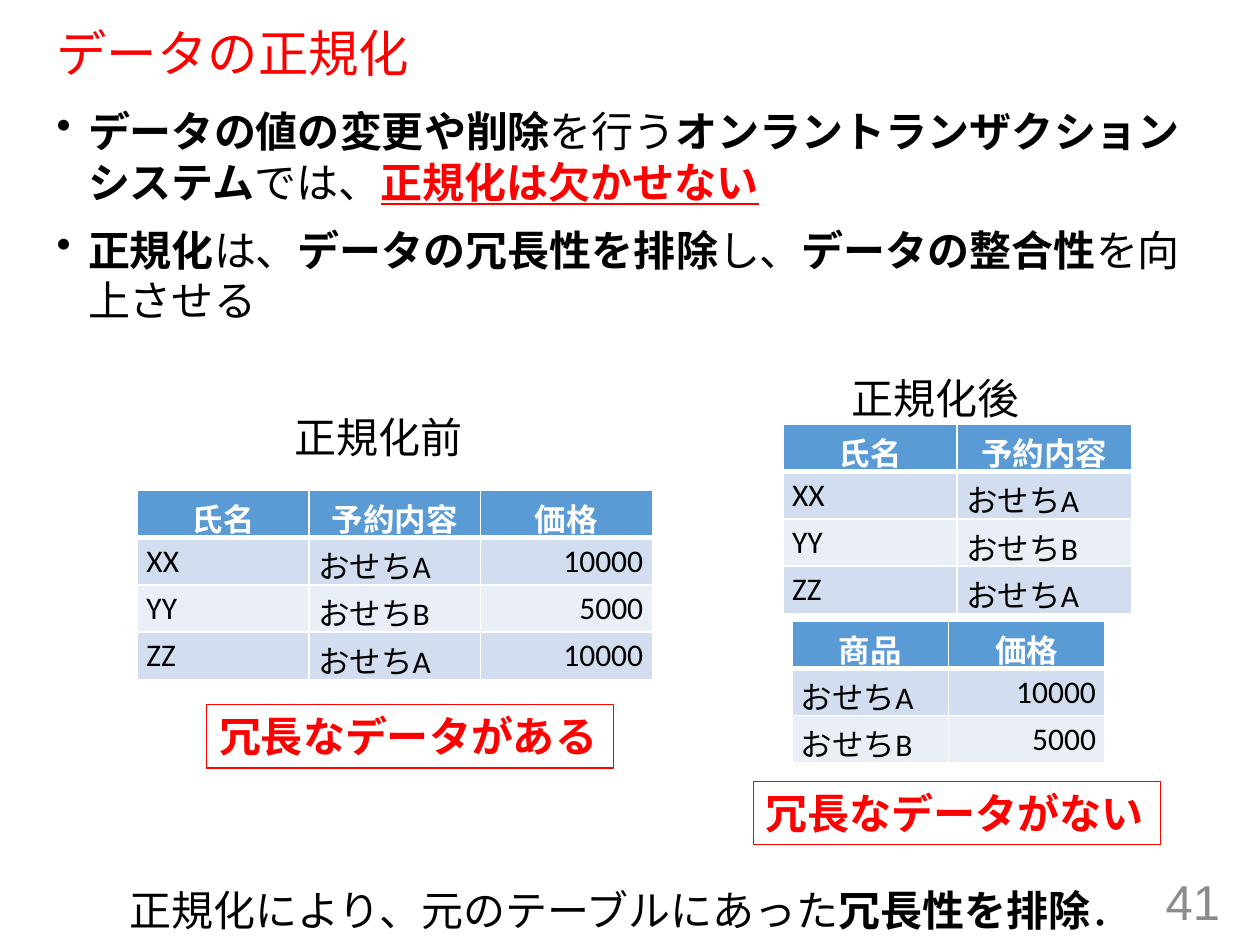
import pptx
import pptx.dml.color
import pptx.enum.text
import pptx.oxml
import pptx.oxml.ns
import pptx.util

Pt = pptx.util.Pt
ALIGN = pptx.enum.text.PP_ALIGN
ANCHOR = pptx.enum.text.MSO_ANCHOR
COLORS = {
    "black": "000000", "red": "FF0000", "gray": "8C8C8C", "white": "FFFFFF",
    "header": "5B9BD5", "odd row": "D2DEEF", "even row": "EAEFF7",
}
RGB = {name: pptx.dml.color.RGBColor.from_string(value) for name, value in COLORS.items()}

presentation = pptx.Presentation()
presentation.slide_width, presentation.slide_height = Pt(720), Pt(540)
slide = presentation.slides.add_slide(presentation.slide_layouts[6])


def add_text(box, runs, size, font="Calibri", color="black", wrap=False, anchor=ANCHOR.TOP):
    """Add a text box of one paragraph; runs are (text, bold) pairs."""
    shape = slide.shapes.add_textbox(*map(Pt, box))
    frame = shape.text_frame
    frame.word_wrap = wrap
    frame.vertical_anchor = anchor
    paragraph = frame.paragraphs[0]
    paragraph.font.size = Pt(size)
    paragraph.font.name = font
    paragraph.font.color.rgb = RGB[color]
    for text, bold in runs:
        run = paragraph.add_run()
        run.text = text
        run.font.bold = bold
    return shape


def add_border(cell, side, width):
    line = pptx.oxml.parse_xml(
        f'<a:ln{side} {pptx.oxml.ns.nsdecls("a")} w="{Pt(width)}"><a:solidFill>'
        f'<a:srgbClr val="{COLORS["white"]}"/></a:solidFill></a:ln{side}>')
    cell._tc.get_or_add_tcPr().append(line)


# Title and bullets
add_text((25.2, 13.7, 666, 36.7), [("データの正規化", False)], 28.8, "Arial", "red",
         wrap=True, anchor=ANCHOR.MIDDLE).text_frame.paragraphs[0].line_spacing = 0.9

bullets = [
    [("データの値の変更や削除", True), ("を行う", False),
     ("オンラントランザクションシステム", True), ("では、", False),
     ("正規化は欠かせない", True)],
    [("正規化", True), ("は、", False), ("データの冗長性を排除", True), ("し、", False),
     ("データの整合性", True), ("を向上させる", False)],
]
body = slide.shapes.add_textbox(Pt(25.2), Pt(56.9), Pt(666), Pt(412))
body.text_frame.word_wrap = True
for index, runs in enumerate(bullets):
    paragraph = body.text_frame.paragraphs[0] if index == 0 else body.text_frame.add_paragraph()
    paragraph.space_before = Pt(10)
    paragraph.font.size = Pt(24)
    paragraph.font.name = "Arial"
    properties = paragraph._p.get_or_add_pPr()
    properties.set("marL", str(Pt(18)))
    properties.set("indent", str(Pt(-18)))
    bullet = pptx.oxml.parse_xml(f'<a:buChar {pptx.oxml.ns.nsdecls("a")} char="•"/>')
    properties.find(pptx.oxml.ns.qn("a:defRPr")).addprevious(bullet)
    for text, bold in runs:
        run = paragraph.add_run()
        run.text = text
        run.font.bold = bold
        key_phrase = text == "正規化は欠かせない"
        run.font.underline = key_phrase
        run.font.color.rgb = RGB["red" if key_phrase else "black"]

# Captions, conclusion and slide number
add_text((161.3, 231.8, 111.6, 36), [("正規化前", False)], 24)
add_text((479.5, 209.5, 111.6, 36), [("正規化後", False)], 24)
add_text((67, 501.8, 596.2, 36),
         [("正規化により、元のテーブルにあった", False), ("冗長性を排除", True), ("．", False)], 24)
number = add_text((542.2, 500.4, 162, 28.8), [("41", False)], 28, "Arial", "gray",
                  wrap=True, anchor=ANCHOR.MIDDLE)
number.text_frame.paragraphs[0].alignment = ALIGN.RIGHT

# Framed remarks
for left, top, text in [(118.1, 402.5, "冗長なデータがある"), (430.6, 446.4, "冗長なデータがない")]:
    remark = add_text((left, top, 232.6, 36.4), [(text, True)], 24, color="red")
    remark.line.color.rgb = RGB["red"]
    remark.line.width = Pt(0.75)

# Tables: left, top, column width, rows
ROW_HEIGHT = 27
tables = [
    (447.4, 242.6, 99.6, [("氏名", "予約内容"), ("XX", "おせちA"), ("YY", "おせちB"),
                          ("ZZ", "おせちA")]),
    (452.5, 355, 89.5, [("商品", "価格"), ("おせちA", "10000"), ("おせちB", "5000")]),
    (78.5, 280.2, 98.1, [("氏名", "予約内容", "価格"), ("XX", "おせちA", "10000"),
                         ("YY", "おせちB", "5000"), ("ZZ", "おせちA", "10000")]),
]
for left, top, column_width, rows in tables:
    columns = len(rows[0])
    table = slide.shapes.add_table(
        len(rows), columns, Pt(left), Pt(top),
        Pt(column_width * columns), Pt(ROW_HEIGHT * len(rows))).table
    for row_index, row in enumerate(rows):
        is_header = row_index == 0
        fill = "header" if is_header else "odd row" if row_index % 2 else "even row"
        for column_index, text in enumerate(row):
            cell = table.cell(row_index, column_index)
            cell.margin_left = cell.margin_right = Pt(5.2)
            cell.margin_top = cell.margin_bottom = Pt(2.6)
            for side in "LRTB":
                thick = (is_header and side == "B") or (row_index == 1 and side == "T")
                add_border(cell, side, 3 if thick else 1)
            cell.fill.solid()
            cell.fill.fore_color.rgb = RGB[fill]
            cell.text = text
            paragraph = cell.text_frame.paragraphs[0]
            if is_header:
                paragraph.alignment = ALIGN.CENTER
            elif text.isdigit():
                paragraph.alignment = ALIGN.RIGHT
            paragraph.font.size = Pt(18)
            paragraph.font.name = "Calibri"
            paragraph.font.bold = is_header
            paragraph.font.color.rgb = RGB["white" if is_header else "black"]

presentation.save("out.pptx")
